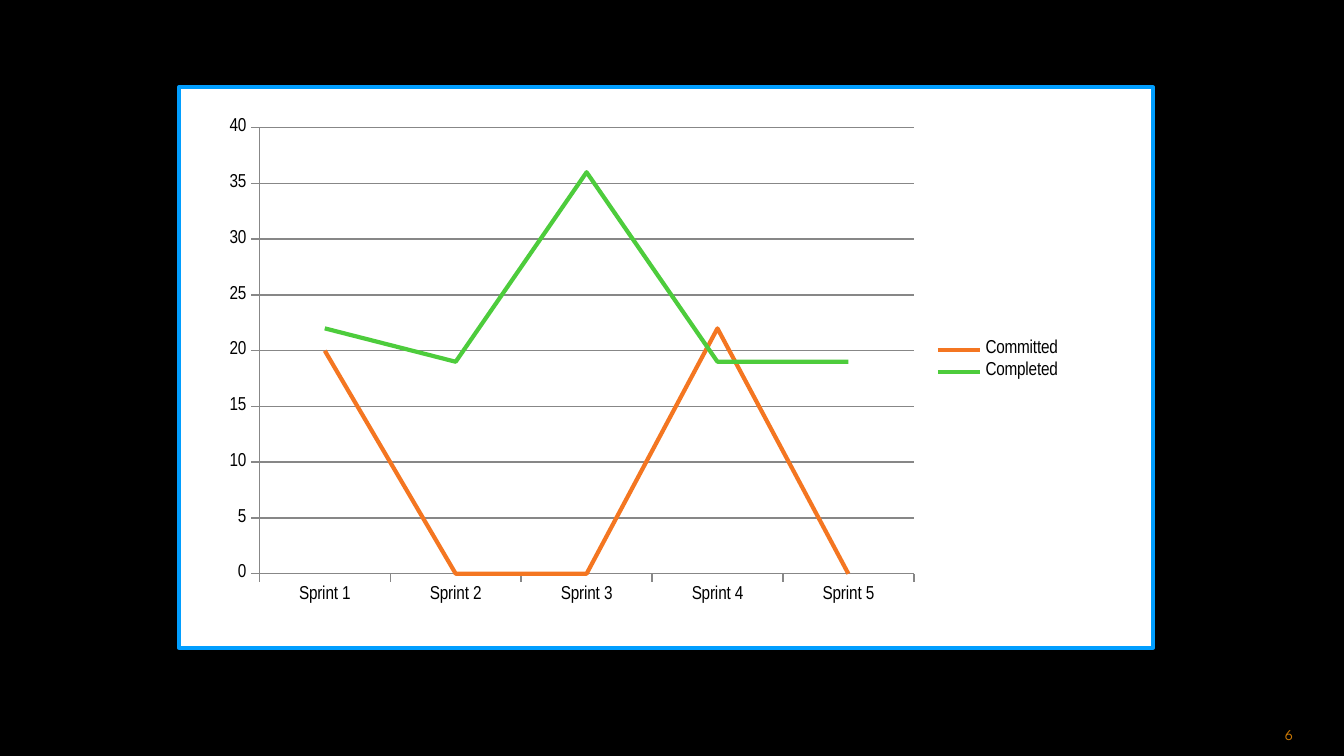
from lxml import etree
from pptx import Presentation
from pptx import util as u
from pptx.chart.data import CategoryChartData
from pptx.dml.color import RGBColor
from pptx.enum import chart as ch, shapes, text
from pptx.oxml import parse_xml
from pptx.oxml.ns import nsdecls, qn


def rgb(value):
    return RGBColor.from_string(value)


class SprintSlide:
    chart_font = "Arial Narrow"
    number_font = "League Spartan"
    background = "000000"
    panel_fill = "FFFFFF"
    panel_line = "019EFF"
    axis_color = "878787"
    number_color = "CA7805"

    def __init__(self, prs):
        self.s = prs.slides.add_slide(prs.slide_layouts[6])
        fill = self.s.background.fill
        fill.solid()
        fill.fore_color.rgb = rgb(self.background)

    def box(self, at):
        return [u.Inches(n) for n in at]

    def line(self, line, color, width):
        line.color.rgb = rgb(color)
        line.width = u.Pt(width)

    def panel(self, at):
        sp = self.s.shapes.add_shape(shapes.MSO_SHAPE.RECTANGLE, *self.box(at))
        sp.shadow.inherit = False
        sp.fill.solid()
        sp.fill.fore_color.rgb = rgb(self.panel_fill)
        self.line(sp.line, self.panel_line, 2)

    def number(self, at, value):
        sp = self.s.shapes.add_textbox(*self.box(at))
        tf = sp.text_frame
        tf.word_wrap = True
        tf.vertical_anchor = text.MSO_ANCHOR.MIDDLE
        tf.margin_left = tf.margin_right = tf.margin_top = tf.margin_bottom = 0
        p = tf.paragraphs[0]
        p.alignment = text.PP_ALIGN.CENTER
        r = p.add_run()
        r.text = value
        r.font.size = u.Pt(8)
        r.font.name = self.number_font
        r.font.color.rgb = rgb(self.number_color)

    def line_chart(self, at, categories, series, plot):
        data = CategoryChartData()
        data.categories = categories
        for name, values, color in series:
            data.add_series(name, values)
        chart = self.s.shapes.add_chart(
            ch.XL_CHART_TYPE.LINE, *self.box(at), data).chart
        chart.has_title = False
        chart.font.size = u.Pt(10)
        chart.font.name = self.chart_font
        chart.font.color.rgb = rgb("000000")
        chart.has_legend = True
        chart.legend.position = ch.XL_LEGEND_POSITION.RIGHT
        chart.legend.include_in_layout = False
        chart.plots[0].vary_by_categories = False
        for axis in (chart.category_axis, chart.value_axis):
            axis.major_tick_mark = ch.XL_TICK_MARK.OUTSIDE
            axis.minor_tick_mark = ch.XL_TICK_MARK.NONE
            self.line(axis.format.line, self.axis_color, 0.75)
        axis = chart.value_axis
        axis.minimum_scale, axis.maximum_scale, axis.major_unit = 0, 40, 5
        axis.has_major_gridlines = True
        self.line(axis.major_gridlines.format.line, self.axis_color, 0.75)
        for line, (name, values, color) in zip(chart.plots[0].series, series):
            line.smooth = False
            line.marker.style = ch.XL_MARKER_STYLE.NONE
            self.line(line.format.line, color, 2.25)
        self.place_plot(chart, at, plot)

    def place_plot(self, chart, at, plot):
        left, top, width, height = at
        x, y, w, h = plot
        shares = ((x - left) / width, (y - top) / height, w / width, h / height)
        area = chart.element.find(".//" + qn("c:plotArea"))
        for old in area.findall(qn("c:layout")):
            area.remove(old)
        layout = parse_xml(f"<c:layout {nsdecls('c')}><c:manualLayout/></c:layout>")
        settings = [("layoutTarget", "inner"), ("xMode", "edge"), ("yMode", "edge")]
        for tag, value in settings + list(zip("xywh", shares)):
            etree.SubElement(layout[0], qn("c:" + tag)).set("val", str(value))
        area.insert(0, layout)


def main():
    prs = Presentation()
    prs.slide_width = u.Inches(10)
    prs.slide_height = prs.slide_width * 9 // 16
    slide = SprintSlide(prs)
    slide.number((9.33, 5.39, 0.52, 0.15), "6")
    slide.panel((1.33, 0.65, 7.25, 4.17))
    slide.line_chart(
        (1.58, 0.81, 6.42, 3.75),
        [f"Sprint {n}" for n in range(1, 6)],
        [("Committed", (20, 0, 0, 22, 0), "F47621"),
         ("Completed", (22, 19, 36, 19, 19), "4DCC3C")],
        plot=(1.93, 0.95, 4.87, 3.32))
    prs.save("out.pptx")


if __name__ == "__main__":
    main()
